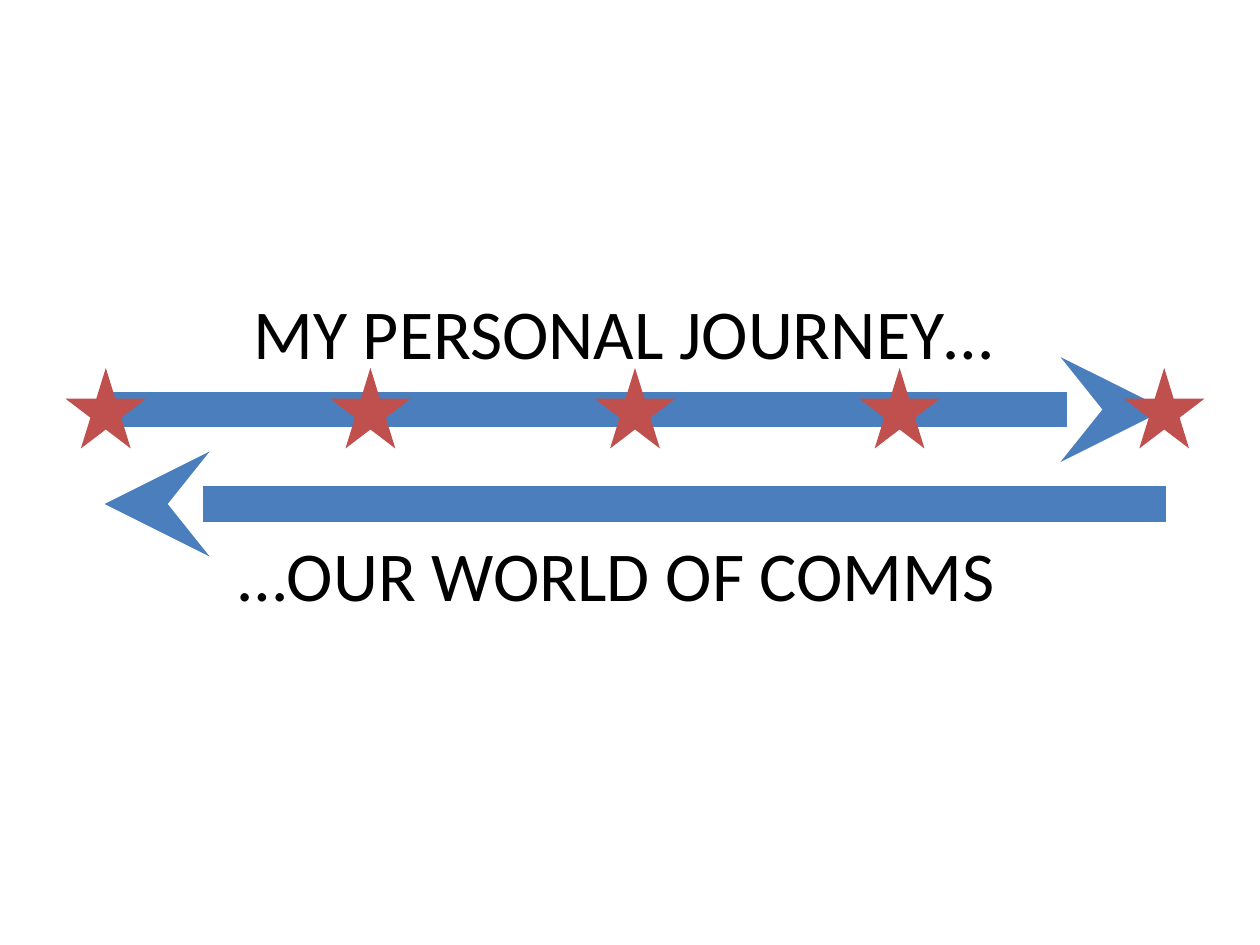
from pptx import Presentation
from pptx.dml.color import RGBColor
from pptx.enum.shapes import MSO_CONNECTOR, MSO_SHAPE
from pptx.enum.text import MSO_AUTO_SIZE, PP_ALIGN
from pptx.oxml.ns import qn
from pptx.util import Inches, Pt
from lxml import etree

STRAIGHT = MSO_CONNECTOR.STRAIGHT
STAR = MSO_SHAPE.STAR_5_POINT
CENTER = PP_ALIGN.CENTER
FIT_SHAPE = MSO_AUTO_SIZE.SHAPE_TO_FIT_TEXT

BLUE, RED, BLACK = "4B7EBC", "C0504D", "000000"
ARROWS = [(3.25, "a:tailEnd"), (4, "a:headEnd")]
CAPTIONS = [
    ("MY PERSONAL JOURNEY…", 1.88, 2.25, 6.13),
    ("…OUR WORLD OF COMMS", 1.76, 4.17, 6.27),
]
ARROW_LEFT, ARROW_RIGHT = 0.83, 9.25
STAR_COUNT, STAR_SIZE, STAR_LEFT, STAR_TOP, STAR_STEP = 5, 0.64, 0.52, 2.92, 2.1


def rgb(color):
    return RGBColor.from_string(color)


def add_arrow(s, y, end):
    line = s.shapes.add_connector(
        STRAIGHT, Inches(ARROW_LEFT), Inches(y), Inches(ARROW_RIGHT), Inches(y))
    line.line.color.rgb = rgb(BLUE)
    line.line.width = Pt(20)
    ln = line.line._get_or_add_ln()
    etree.SubElement(ln, qn(end)).set("type", "stealth")
    etree.SubElement(line._element.spPr, qn("a:effectLst"))


def add_caption(s, text, left, top, width):
    sp = s.shapes.add_textbox(Inches(left), Inches(top), Inches(width), Inches(0.77))
    tf = sp.text_frame
    tf.word_wrap = False
    tf.auto_size = FIT_SHAPE
    p = tf.paragraphs[0]
    p.text = text
    p.alignment = CENTER
    p.font.name = "Calibri"
    p.font.size = Pt(40)
    p.font.color.rgb = rgb(BLACK)


def add_star(s, left):
    sp = s.shapes.add_shape(
        STAR, Inches(left), Inches(STAR_TOP), Inches(STAR_SIZE), Inches(STAR_SIZE))
    sp.shadow.inherit = False
    sp.fill.solid()
    sp.fill.fore_color.rgb = rgb(RED)
    sp.line.fill.background()


def main():
    """Build a slide with two opposed arrows, captions and milestone stars."""
    prs = Presentation()
    prs.slide_width, prs.slide_height = Inches(10), Inches(7.5)
    s = prs.slides.add_slide(prs.slide_layouts[6])
    for y, end in ARROWS:
        add_arrow(s, y, end)
    for caption in CAPTIONS:
        add_caption(s, *caption)
    for i in range(STAR_COUNT):
        add_star(s, STAR_LEFT + i * STAR_STEP)
    prs.save("out.pptx")


if __name__ == "__main__":
    main()
